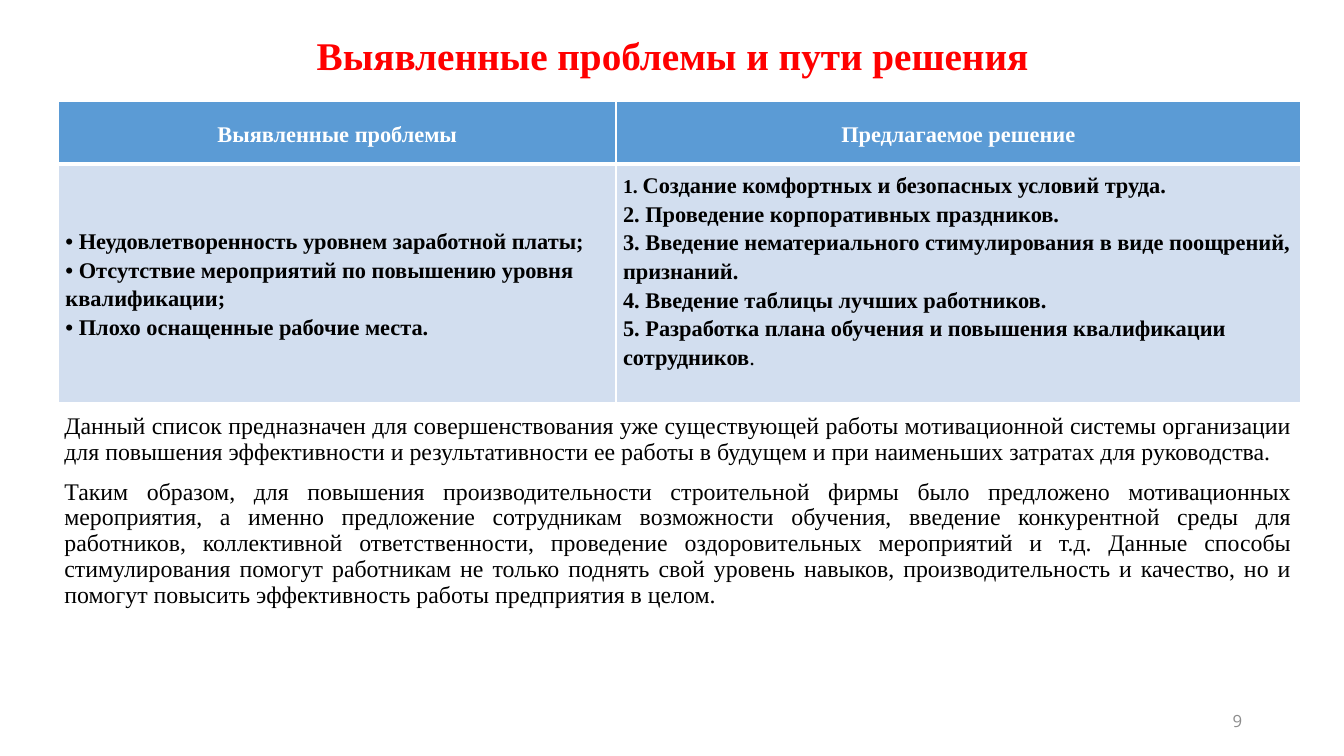
from dataclasses import dataclass
from lxml.etree import SubElement as Sub
from pptx import Presentation
from pptx.dml.color import RGBColor as Color
from pptx.enum.text import MSO_ANCHOR as Anchor, PP_ALIGN as Align
from pptx.oxml.ns import qn
from pptx.util import Inches, Pt


@dataclass(frozen=True)
class Theme:
    serif: str = "Times New Roman"
    sans: str = "Open Sans"
    red: str = "FF0000"
    black: str = "000000"
    white: str = "FFFFFF"
    gray: str = "8C8C8C"
    blue: str = "5B9BD5"
    pale: str = "D2DEEF"
    title: int = 28
    body: int = 17
    cell: int = 16
    small: int = 14
    page: int = 12


def write(frame, lines, font, size, color, bold=False, align=Align.LEFT,
          lead=1.0, gap=0, anchor=Anchor.TOP):
    frame.word_wrap = True
    frame.vertical_anchor = anchor
    for i, line in enumerate(lines):
        para = frame.paragraphs[0] if i == 0 else frame.add_paragraph()
        para.alignment = align
        para.line_spacing = lead
        para.space_before = Pt(gap if i else 0)
        parts = [(line, {})] if isinstance(line, str) else line
        for text, diff in parts:
            run = para.add_run()
            run.text = text
            run.font.name = font
            run.font.size = Pt(diff.get("size", size))
            run.font.bold = diff.get("bold", bold)
            run.font.color.rgb = Color.from_string(color)


class Deck:
    def __init__(self, theme):
        self.theme = theme
        self.show = Presentation()
        self.show.slide_width = Inches(13.33)
        self.show.slide_height = Inches(7.5)
        self.slide = self.show.slides.add_slide(self.show.slide_layouts[5])

    def title(self, text, box):
        shape = self.slide.shapes.title
        shape.left, shape.top, shape.width, shape.height = map(Inches, box)
        write(shape.text_frame, [text], self.theme.serif, self.theme.title,
              self.theme.red, bold=True, align=Align.CENTER, lead=0.9,
              anchor=Anchor.MIDDLE)

    def text(self, lines, box, **style):
        shape = self.slide.shapes.add_textbox(*map(Inches, box))
        write(shape.text_frame, lines, **style)

    def table(self, rows, box, widths, heights):
        shape = self.slide.shapes.add_table(len(rows), len(widths),
                                            *map(Inches, box))
        grid = shape.table
        grid.horz_banding = False
        for col, width in zip(grid.columns, widths):
            col.width = Inches(width)
        for row, height in zip(grid.rows, heights):
            row.height = Inches(height)
        for r, row in enumerate(rows):
            for c, lines in enumerate(row):
                self.cell(grid.cell(r, c), lines, head=r == 0)
        return grid

    def cell(self, cell, lines, head):
        theme = self.theme
        cell.margin_left = cell.margin_right = Inches(0.07)
        cell.margin_top = cell.margin_bottom = 0
        cell.vertical_anchor = Anchor.MIDDLE
        thick = "B" if head else "T"
        for side in "LRTB":
            self.edge(cell, side, 3 if side == thick else 1)
        cell.fill.solid()
        cell.fill.fore_color.rgb = Color.from_string(
            theme.blue if head else theme.pale)
        write(cell.text_frame, lines, theme.serif, theme.cell,
              theme.white if head else theme.black, bold=True, lead=1.15,
              align=Align.CENTER if head else Align.LEFT,
              anchor=Anchor.MIDDLE)

    def edge(self, cell, side, width):
        props = cell._tc.get_or_add_tcPr()
        line = Sub(props, qn("a:ln" + side), w=str(Pt(width)))
        fill = Sub(line, qn("a:solidFill"))
        Sub(fill, qn("a:srgbClr"), val=self.theme.white)


def main():
    theme = Theme()
    deck = Deck(theme)
    deck.title("Выявленные проблемы и пути решения", (0.92, 0.14, 11.5, 0.87))

    flaws = [
        "• Неудовлетворенность уровнем заработной платы;",
        "• Отсутствие мероприятий по повышению уровня квалификации;",
        "• Плохо оснащенные рабочие места.",
    ]
    cures = [
        [("1. ", {"size": theme.small}),
         ("Создание комфортных и безопасных условий труда.", {})],
        "2. Проведение корпоративных праздников.",
        "3. Введение нематериального стимулирования в виде поощрений, признаний.",
        "4. Введение таблицы лучших работников.",
        [("5. Разработка плана обучения и повышения квалификации сотрудников", {}),
         (".", {"bold": False})],
    ]
    heads = [["Выявленные проблемы"], ["Предлагаемое решение"]]
    grid = deck.table([heads, [flaws, cures]], (0.58, 1.01, 12.32, 2.98),
                      (5.53, 6.79), (0.62, 2.36))
    grid.cell(1, 1).margin_bottom = Inches(0.26)

    deck.text([
        "Данный список предназначен для совершенствования уже существующей "
        "работы мотивационной системы организации для повышения эффективности "
        "и результативности ее работы в будущем и при наименьших затратах для "
        "руководства.",
        "Таким образом, для повышения производительности строительной фирмы "
        "было предложено мотивационных мероприятия, а именно предложение "
        "сотрудникам возможности обучения, введение конкурентной среды для "
        "работников, коллективной ответственности, проведение оздоровительных "
        "мероприятий и т.д. Данные способы стимулирования помогут работникам "
        "не только поднять свой уровень навыков, производительность и "
        "качество, но и помогут повысить эффективность работы предприятия в "
        "целом.",
    ], (0.54, 4.06, 12.37, 3.25), font=theme.serif, size=theme.body,
        color=theme.black, align=Align.JUSTIFY, lead=0.9, gap=10)

    deck.text(["9"], (9.42, 6.95, 3, 0.4), font=theme.sans, size=theme.page,
              color=theme.gray, align=Align.RIGHT, anchor=Anchor.MIDDLE)
    deck.show.save("out.pptx")


if __name__ == "__main__":
    main()
